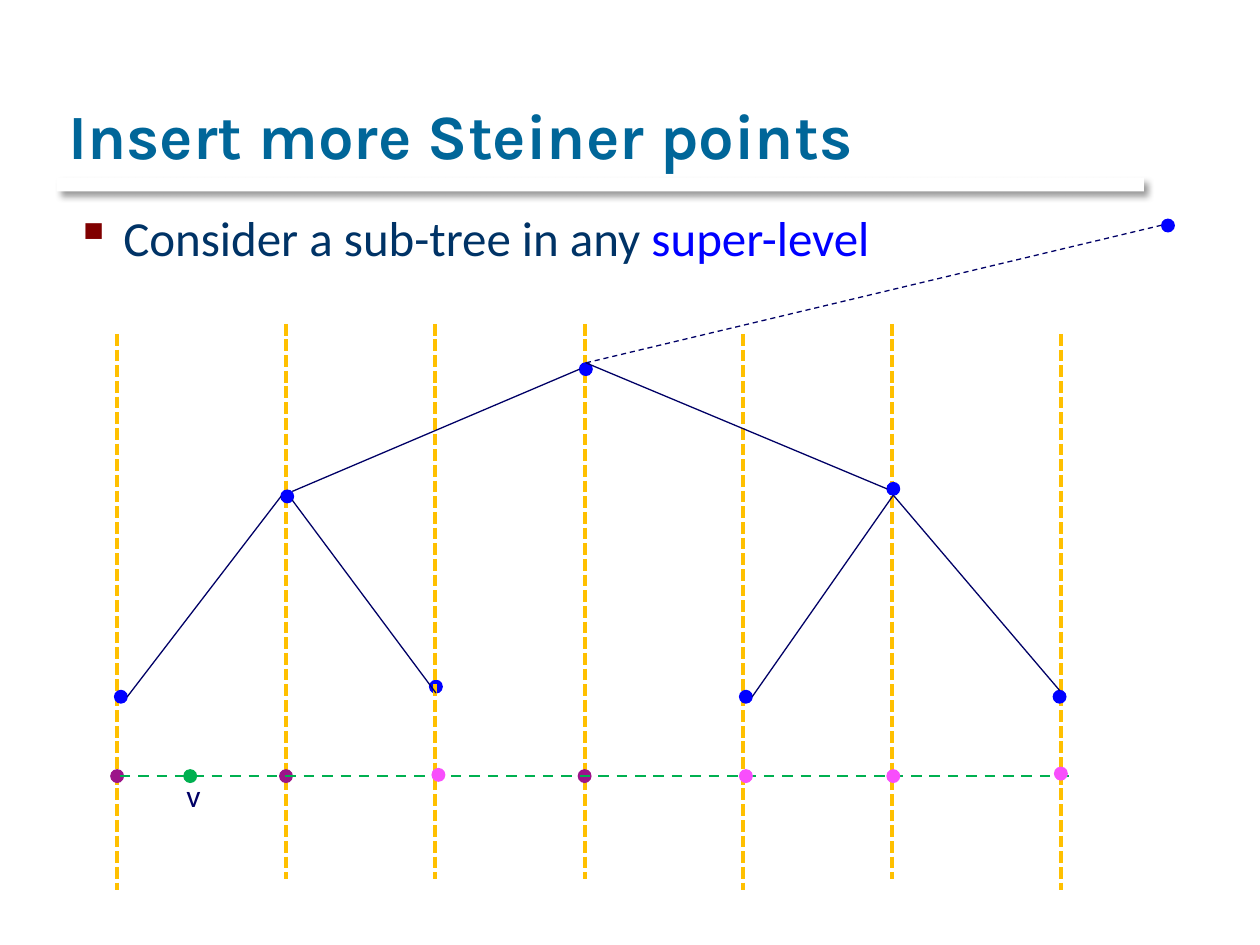
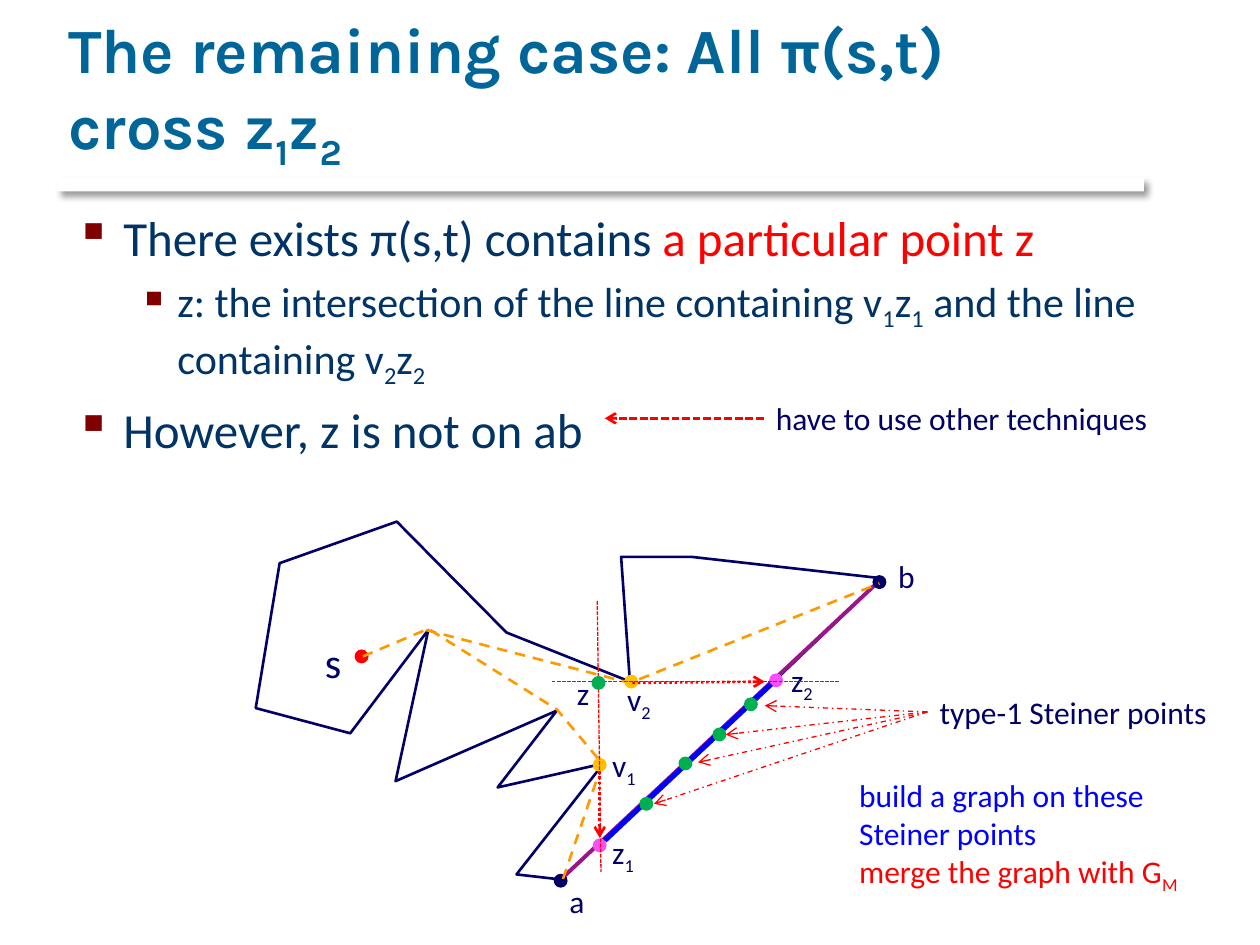
from lxml.etree import SubElement
from pptx import Presentation
from pptx.dml.color import RGBColor
from pptx.enum.dml import MSO_LINE
from pptx.enum.shapes import MSO_CONNECTOR, MSO_SHAPE
from pptx.enum.text import MSO_ANCHOR, MSO_AUTO_SIZE, PP_ALIGN
from pptx.oxml.ns import qn
from pptx.util import Inches, Pt

TEAL = RGBColor(0x00, 0x66, 0x99)
SLATE = RGBColor(0x00, 0x33, 0x66)
NAVY = RGBColor(0x00, 0x00, 0x66)
MAROON = RGBColor(0x80, 0x00, 0x00)
BLUE = RGBColor(0x00, 0x00, 0xFF)
RED = RGBColor(0xFF, 0x00, 0x00)
GREEN = RGBColor(0x00, 0xB0, 0x50)
AMBER = RGBColor(0xFF, 0xC0, 0x00)
ORANGE = RGBColor(0xFF, 0x99, 0x00)
PURPLE = RGBColor(0x9C, 0x14, 0x89)
PINK = RGBColor(0xF8, 0x4E, 0xFC)
WHITE = RGBColor(0xFF, 0xFF, 0xFF)

TITLE_FONT = "Karla"
BODY_FONT = "Calibri"
TITLE_ONLY = 5
DOT_SIZE = 0.1

# Per bullet level: text size, left indent, hanging indent
BULLET_LEVELS = [(28, 0.38, 0.38), (24, 0.81, 0.31)]


class SlideBuilder:
    """Holds the deck's style and draws on the current page."""

    def __init__(self):
        self.deck = Presentation()
        self.deck.slide_width = Inches(10)
        self.deck.slide_height = Inches(7.5)
        self.page = None

    def new_page(self, title):
        layout = self.deck.slide_layouts[TITLE_ONLY]
        self.page = self.deck.slides.add_slide(layout)
        self.title_rule()
        box = self.page.shapes.title
        box.left, box.top = Inches(0.44), Inches(0.17)
        box.width, box.height = Inches(8.5), Inches(1.25)
        frame = box.text_frame
        frame.word_wrap = True
        frame.auto_size = MSO_AUTO_SIZE.NONE
        frame.vertical_anchor = MSO_ANCHOR.BOTTOM
        para = frame.paragraphs[0]
        para.alignment = PP_ALIGN.LEFT
        self.fill_para(para, [(title, None)], 36, TEAL, TITLE_FONT)
        para.font.bold = True

    def title_rule(self):
        """White bar whose soft shadow underlines the title."""
        bar = self.page.shapes.add_shape(
            MSO_SHAPE.RECTANGLE, Inches(0.45), Inches(1.41), Inches(8.63), Inches(0.11))
        bar.fill.solid()
        bar.fill.fore_color.rgb = WHITE
        bar.line.fill.background()
        effects = SubElement(bar._element.spPr, qn("a:effectLst"))
        shadow = SubElement(effects, qn("a:outerShdw"), blurRad=str(Pt(4)),
                            dist=str(Pt(3)), dir="2700000", algn="tl", rotWithShape="0")
        black = SubElement(shadow, qn("a:srgbClr"), val="000000")
        SubElement(black, qn("a:alpha"), val="40000")

    def fill_para(self, para, parts, size, color, font=BODY_FONT):
        """Add (text, colour) parts; the character after "_" is a subscript."""
        para.font.name = font
        para.font.size = Pt(size)
        para.font.color.rgb = color
        for text, part_color in parts:
            plain, *subscripted = text.split("_")
            pieces = [(plain, False)]
            for piece in subscripted:
                pieces += [(piece[0], True), (piece[1:], False)]
            for piece, lowered in pieces:
                if not piece:
                    continue
                span = para.add_run()
                span.text = piece
                if part_color is not None:
                    span.font.color.rgb = part_color
                if lowered:
                    span._r.get_or_add_rPr().set("baseline", "-25000")

    def text_box(self, left, top, width, height, wrap):
        box = self.page.shapes.add_textbox(
            Inches(left), Inches(top), Inches(width), Inches(height))
        box.text_frame.word_wrap = wrap
        if not wrap:
            box.text_frame.auto_size = MSO_AUTO_SIZE.SHAPE_TO_FIT_TEXT
        return box.text_frame

    def bullets(self, height, items):
        """Add (level, parts) items below the title."""
        frame = self.text_box(0.5, 1.6, 8.91, height, wrap=True)
        for index, (level, parts) in enumerate(items):
            para = frame.add_paragraph() if index else frame.paragraphs[0]
            size, indent, hanging = BULLET_LEVELS[level]
            para.level = level
            para.space_before = Pt(size * 0.2)
            props = para._p.get_or_add_pPr()
            props.set("marL", str(Inches(indent)))
            props.set("indent", str(-Inches(hanging)))
            tint = SubElement(props, qn("a:buClr"))
            SubElement(tint, qn("a:srgbClr"), val=str(MAROON))
            SubElement(props, qn("a:buChar"), char="▪")
            self.fill_para(para, parts, size, SLATE)

    def label(self, left, top, width, *lines, height=0.4, size=18, color=NAVY):
        """Add unwrapped text, one (text, colour) pair or plain text per line."""
        frame = self.text_box(left, top, width, height, wrap=False)
        for index, line in enumerate(lines):
            para = frame.add_paragraph() if index else frame.paragraphs[0]
            text, line_color = line if isinstance(line, tuple) else (line, color)
            self.fill_para(para, [(text, None)], size, line_color)

    def dot(self, left, top, color):
        dot = self.page.shapes.add_shape(
            MSO_SHAPE.OVAL, Inches(left), Inches(top), Inches(DOT_SIZE), Inches(DOT_SIZE))
        dot.shadow.inherit = False
        dot.fill.solid()
        dot.fill.fore_color.rgb = color
        self.stroke(dot, color, 0.75)

    def stroke(self, shape, color, width, dash=None):
        shape.line.color.rgb = color
        shape.line.width = Pt(width)
        if dash is not None:
            shape.line.dash_style = dash

    def line(self, start, end, color=NAVY, width=0.75, dash=None, arrow=False):
        ends = [Inches(value) for value in (*start, *end)]
        line = self.page.shapes.add_connector(MSO_CONNECTOR.STRAIGHT, *ends)
        self.stroke(line, color, width, dash)
        props = line._element.spPr
        if arrow:
            SubElement(props.find(qn("a:ln")), qn("a:tailEnd"), type="arrow")
        SubElement(props, qn("a:effectLst"))

    def outline(self, points, color, dash=None, fill=None):
        """Draw a path through the points, closed when it has a fill."""
        start, *others = [(Inches(x), Inches(y)) for x, y in points]
        builder = self.page.shapes.build_freeform(*start)
        builder.add_line_segments(others, close=fill is not None)
        shape = builder.convert_to_shape()
        shape.shadow.inherit = False
        if fill is None:
            shape.fill.background()
        else:
            shape.fill.solid()
            shape.fill.fore_color.rgb = fill
        self.stroke(shape, color, 1.5, dash)


def steiner_tree(slide):
    slide.new_page("Insert more Steiner points")

    # Vertical cuts; one leaf lies behind its cut
    slide.dot(3.41, 5.4, BLUE)
    high, low = 2.57, 2.65
    for x, top in [(0.93, low), (2.27, high), (3.45, high), (4.64, high),
                   (5.9, low), (7.08, high), (8.42, low)]:
        slide.line((x, top), (x, top + 4.41), AMBER, 2.25, MSO_LINE.SQUARE_DOT)

    # Tree nodes and edges
    for left, top in [(4.6, 2.88), (2.23, 3.89), (7.04, 3.83),
                      (0.91, 5.48), (5.87, 5.48), (8.36, 5.48)]:
        slide.dot(left, top, BLUE)
    for start, end in [((4.6, 2.93), (2.32, 3.9)), ((4.65, 2.88), (7.04, 3.88)),
                       ((7.09, 3.93), (5.97, 5.53)), ((7.09, 3.93), (8.41, 5.48)),
                       ((2.23, 3.94), (1.01, 5.53)), ((2.32, 3.97), (3.46, 5.5))]:
        slide.line(start, end)

    # Link to the parent node
    slide.line((4.65, 2.88), (9.25, 1.78), dash=MSO_LINE.DASH)
    slide.dot(9.22, 1.74, BLUE)

    slide.bullets(1.68, [
        (0, [("Consider a sub-tree in any ", None), ("super-level", BLUE)])])

    # Base line with the point v and its Steiner points
    slide.dot(1.46, 6.11, GREEN)
    slide.label(1.38, 6.11, 0.31, "v")
    for left in (0.88, 2.22, 4.59):
        slide.dot(left, 6.11, PURPLE)
    slide.line((0.95, 6.16), (8.53, 6.16), GREEN, 1.5, MSO_LINE.DASH)
    for left, top in [(3.43, 6.1), (5.87, 6.11), (7.04, 6.11), (8.37, 6.09)]:
        slide.dot(left, top, PINK)


def remaining_case(slide):
    slide.new_page("The remaining case: All π(s,t) cross z_1z_2")
    slide.bullets(1.28, [
        (0, [("There exists π(s,t) contains ", None), ("a particular point z", RED)]),
        (1, [("z: the intersection of the line containing v_1z_1"
              " and the line containing v_2z_2", None)]),
        (0, [("However, z is not on ab", None)])])

    # Polygon with its edge ab
    slide.outline([(7, 4.59), (5.49, 4.42), (4.93, 4.42), (5, 5.41), (4.02, 5.02),
                   (3.15, 4.14), (2.22, 4.47), (2.03, 5.62), (2.78, 5.82), (3.4, 5),
                   (3.14, 6.2), (4.42, 5.64), (3.95, 6.25), (4.79, 6.06), (4.1, 6.94),
                   (4.45, 6.98), (5.69, 5.84)], NAVY, fill=WHITE)
    slide.line((4.45, 6.98), (7, 4.59), PURPLE, 2.25)
    slide.dot(2.82, 5.16, RED)
    slide.label(2.48, 5, 0.33, "s", height=0.5, size=24)
    slide.dot(4.4, 6.94, NAVY)
    slide.dot(6.93, 4.57, NAVY)
    slide.label(4.42, 6.95, 0.31, "a")
    slide.label(7.03, 4.37, 0.33, "b")

    # Shortest paths from s to a and b
    slide.outline([(2.88, 5.21), (3.4, 4.99), (4.42, 5.63), (4.78, 6.06), (4.46, 7)],
                  ORANGE, MSO_LINE.DASH)
    slide.outline([(3.38, 5), (5, 5.42), (6.98, 4.63)], ORANGE, MSO_LINE.DASH)

    # Extensions from v1 and v2 to z1 and z2
    slide.dot(4.71, 6.02, AMBER)
    slide.dot(4.96, 5.36, AMBER)
    for start, end in [((4.76, 6.12), (4.76, 6.65)), ((5.02, 5.42), (6.07, 5.41))]:
        slide.line(start, end, RED, 1.5, MSO_LINE.ROUND_DOT, arrow=True)
    slide.dot(4.71, 6.66, PINK)
    slide.dot(6.11, 5.35, PINK)
    for left, top, text in [(4.76, 5.87, "v_1"), (4.76, 6.56, "z_1"),
                            (4.88, 5.35, "v_2"), (6.18, 5.2, "z_2")]:
        slide.label(left, top, 0.4, text)

    # Crossing lines that meet at z
    for start, end in [((6.66, 5.41), (4.37, 5.41)), ((4.74, 4.77), (4.77, 6.92))]:
        slide.line(start, end, RED, dash=MSO_LINE.SQUARE_DOT)
    slide.dot(4.7, 5.37, GREEN)
    slide.label(4.48, 5.3, 0.31, "z")

    # Remark on the last bullet
    slide.label(6.06, 3.12, 3.16, "have to use other techniques")
    slide.line((6.06, 3.32), (4.8, 3.32), RED, 1.5, MSO_LINE.SQUARE_DOT, arrow=True)

    # Steiner points on z1z2
    slide.line((4.8, 6.67), (6.12, 5.43), BLUE, 3)
    for left, top in [(5.91, 5.54), (5.66, 5.78), (5.39, 6.01), (5.08, 6.33)]:
        slide.dot(left, top, GREEN)
    slide.label(7.36, 5.45, 2.34, "type-1 Steiner points")
    for tip in [(6.07, 5.6), (5.76, 5.83), (5.54, 6.05), (5.19, 6.38)]:
        slide.line((7.36, 5.65), tip, RED, dash=MSO_LINE.DASH_DOT, arrow=True)
    slide.label(6.72, 6.11, 2.89, ("build a graph on these", BLUE),
                ("Steiner points", BLUE), ("merge the graph with G_M", RED), height=1.01)


def main():
    slide = SlideBuilder()
    steiner_tree(slide)
    remaining_case(slide)
    slide.deck.save("out.pptx")


if __name__ == "__main__":
    main()
